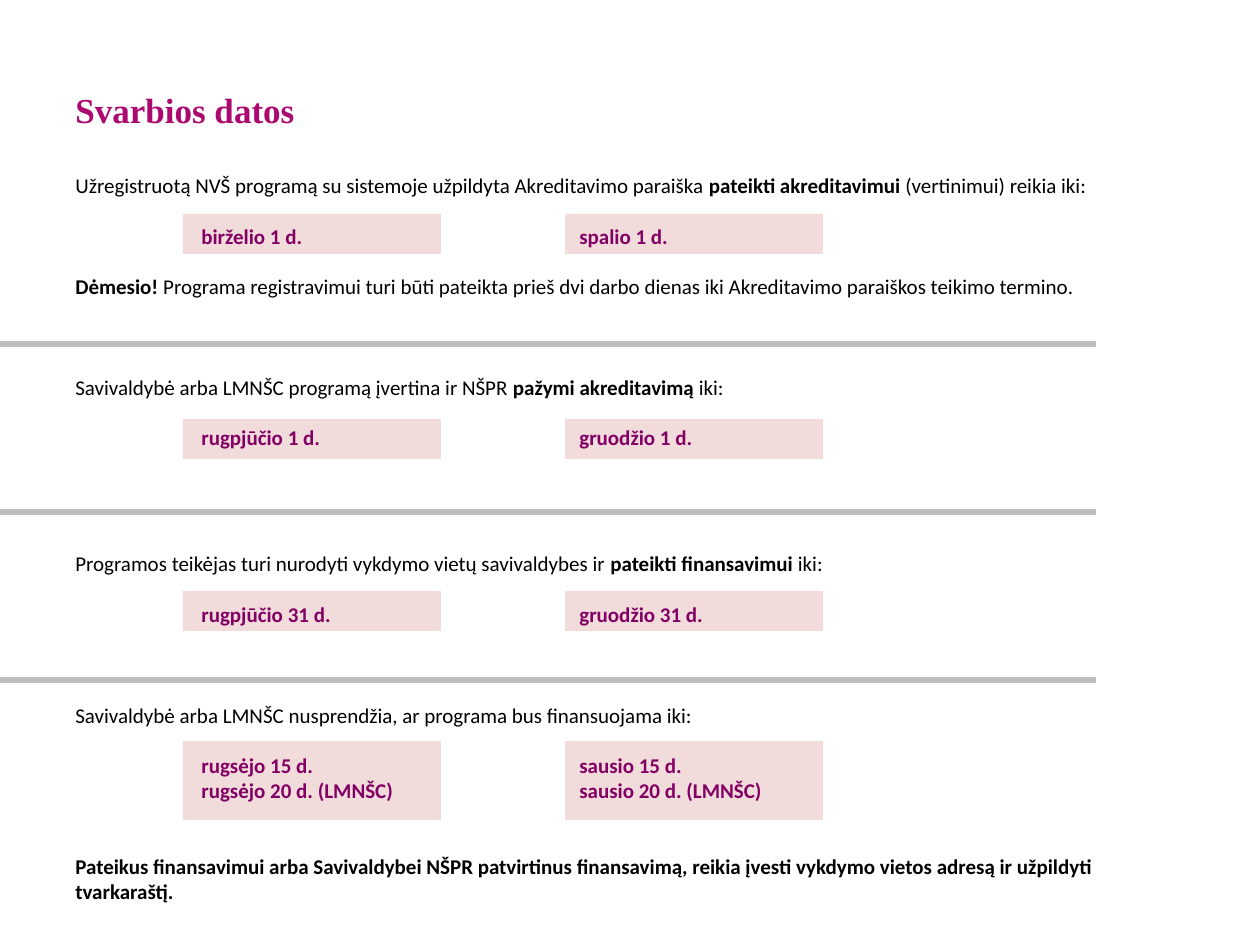
from dataclasses import dataclass

import pptx
import pptx.dml.color
import pptx.enum.shapes
import pptx.enum.text
import pptx.util
from lxml import etree
from pptx.oxml.ns import qn

PX = 914400 / 126
PITCH = 14.4  # points from one text line to the next
BLACK, PLUM, ROSE, GREY = "000000", "820064", "F2DCDB", "BFBFBF"


@dataclass
class Run:
    text: str
    bold: bool = False
    color: str = BLACK


@dataclass
class Line:
    runs: list[Run]
    gap: int = 1  # free text lines above


@dataclass
class Band:
    top: int
    height: int = 40


BANDS = [Band(214), Band(419), Band(591), Band(741, 79)]
COLUMNS = [183, 565]
RULES = [344, 512, 680]


def px(num: int) -> int:
    return round(num * PX)


def rgb(code: str) -> pptx.dml.color.RGBColor:
    return pptx.dml.color.RGBColor.from_string(code)


def dates(first: str, second: str, gap: int = 1) -> Line:
    return Line([Run(f"\t{first}\t{second}", True, PLUM)], gap)


LINES = [
    Line([Run("Užregistruotą NVŠ programą su sistemoje užpildyta Akreditavimo paraiška "),
          Run("pateikti akreditavimui ", True), Run("(vertinimui) reikia iki:")]),
    dates("birželio 1 d.", "spalio 1 d."),
    Line([Run("Dėmesio!", True),
          Run(" Programa registravimui turi būti pateikta prieš dvi darbo dienas "
              "iki Akreditavimo paraiškos teikimo termino.")]),
    Line([Run("Savivaldybė arba LMNŠC programą įvertina ir NŠPR "),
          Run("pažymi akreditavimą ", True), Run("iki:")], 3),
    dates("rugpjūčio 1 d.", "gruodžio 1 d."),
    Line([Run("Programos teikėjas turi nurodyti vykdymo vietų savivaldybes ir "),
          Run("pateikti finansavimui ", True), Run("iki:")], 4),
    dates("rugpjūčio 31 d.", "gruodžio 31 d."),
    Line([Run("Savivaldybė arba LMNŠC nusprendžia, ar programa bus finansuojama iki:")], 3),
    dates("rugsėjo 15 d.", "sausio 15 d."),
    dates("rugsėjo 20 d. (LMNŠC)", "sausio 20 d. (LMNŠC)", 0),
    Line([Run("Pateikus finansavimui arba Savivaldybei NŠPR patvirtinus finansavimą, "
              "reikia įvesti vykdymo vietos adresą ir užpildyti tvarkaraštį.", True)], 2),
]


def add_band(slide, left: int, band: Band) -> None:
    rect = slide.shapes.add_shape(pptx.enum.shapes.MSO_SHAPE.RECTANGLE,
                                  px(left), px(band.top), px(258), px(band.height))
    rect.shadow.inherit = False
    rect.fill.solid()
    rect.fill.fore_color.rgb = rgb(ROSE)
    rect.line.fill.background()


def add_rule(slide, top: int) -> None:
    rule = slide.shapes.add_connector(pptx.enum.shapes.MSO_CONNECTOR.STRAIGHT,
                                      px(1096), px(top), 0, px(top))
    rule.line.color.rgb = rgb(GREY)
    rule.line.width = pptx.util.Pt(3)
    etree.SubElement(rule._element.spPr, qn("a:effectLst"))


def add_run(para, run: Run, size: int = 12, face: str = "Calibri") -> None:
    part = para.add_run()
    part.text = run.text
    part.font.name = face
    part.font.size = pptx.util.Pt(size)
    part.font.bold = run.bold
    part.font.color.rgb = rgb(run.color)


def add_stops(para) -> None:
    """Set the tab stops of the two date columns, in inches."""
    stops = etree.SubElement(para._p.get_or_add_pPr(), qn("a:tabLst"))
    for inch in (1, 4):
        etree.SubElement(stops, qn("a:tab"), pos=str(pptx.util.Inches(inch)), algn="l")


def add_text(slide) -> None:
    frame = slide.shapes.add_textbox(px(63), px(38), px(1123), px(872)).text_frame
    frame.word_wrap = True
    frame.vertical_anchor = pptx.enum.text.MSO_ANCHOR.BOTTOM
    add_run(frame.paragraphs[0], Run("Svarbios datos", True, "AB0970"), 20, "Times New Roman")
    for pos, line in enumerate(LINES):
        para = frame.add_paragraph()
        para.line_spacing = pptx.util.Pt(PITCH)
        para.space_before = pptx.util.Pt(line.gap * PITCH if pos else 24)
        if line.runs[0].text.startswith("\t"):
            add_stops(para)
        for run in line.runs:
            add_run(para, run)


def main() -> None:
    deck = pptx.Presentation()
    deck.slide_width, deck.slide_height = px(1260), px(945)
    slide = deck.slides.add_slide(deck.slide_layouts[6])
    for band in BANDS:
        for left in COLUMNS:
            add_band(slide, left, band)
    for top in RULES:
        add_rule(slide, top)
    add_text(slide)
    deck.save("out.pptx")


if __name__ == "__main__":
    main()
